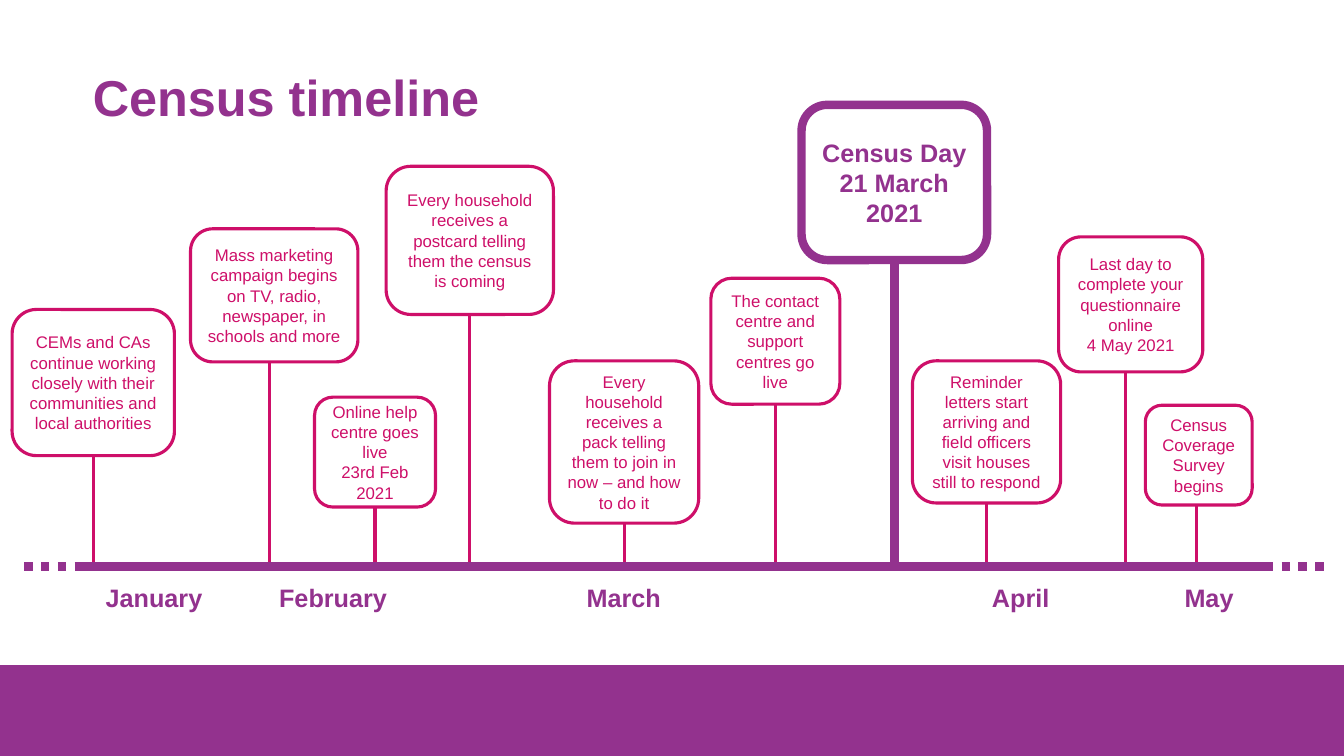
from lxml.etree import SubElement
from pptx import Presentation
from pptx.dml.color import RGBColor
from pptx.enum.dml import MSO_LINE
from pptx.enum.shapes import MSO_CONNECTOR, MSO_SHAPE
from pptx.enum.text import MSO_ANCHOR, PP_ALIGN
from pptx.oxml.ns import qn
from pptx.util import Inches, Pt

COLORS = {"purple": "93328E", "pink": "CE0F69", "white": "FFFFFF"}
AXIS_Y = 5.62
MONTHS = [("January", 0.95, 1.17), ("February", 2.67, 1.28), ("March", 5.72, 0.95),
          ("April", 9.74, 0.78), ("May", 11.65, 0.69)]
# Each event: lines, box, stem x (None joins the middle), fill
EVENTS = [
    (["Reminder letters start arriving and field officers visit houses still to respond"],
     (9.05, 3.58, 1.47, 1.41), None, "white"),
    (["Every household receives a pack telling them to join in now – and how to do it"],
     (5.45, 3.58, 1.48, 1.61), None, None),
    (["The contact centre and support centres go live"],
     (7.05, 2.76, 1.28, 1.25), None, None),
    (["Census Coverage Survey begins"],
     (11.36, 4.02, 1.06, 0.99), 11.87, "white"),
    (["Mass marketing campaign begins on TV, radio, newspaper, in schools and more"],
     (1.89, 2.27, 1.66, 1.32), 2.67, "white"),
    (["Every household receives a postcard telling them the census is coming"],
     (3.83, 1.65, 1.66, 1.47), None, "white"),
    (["Last day to complete your questionnaire online", "4 May 2021"],
     (10.5, 2.35, 1.43, 1.34), 11.16, "white"),
    (["Online help centre goes live", "23rd Feb 2021"],
     (3.12, 3.94, 1.2, 1.09), None, "white"),
    (["CEMs and CAs continue working closely with their communities and local authorities"],
     (0.12, 3.07, 1.61, 1.45), None, "white"),
]


def rgb(name):
    """Return the named colour."""
    return RGBColor.from_string(COLORS[name])


def write(tf, lines, size, color, bold=False, align=PP_ALIGN.LEFT):
    """Write one paragraph per line into a text frame."""
    tf.text = "\n".join(lines)
    for p in tf.paragraphs:
        p.alignment = align
        p.font.name = "Arial"
        p.font.size = Pt(size)
        p.font.bold = bold
        p.font.color.rgb = rgb(color)


def add_label(s, text, x, y, w, h, size):
    """Add a bold purple text box and return its text frame."""
    tf = s.shapes.add_textbox(Inches(x), Inches(y), Inches(w), Inches(h)).text_frame
    tf.word_wrap = False
    write(tf, [text], size, "purple", True)
    return tf


def add_line(s, x1, y1, x2, y2, color, width, dash=None):
    """Add a straight line without shadow."""
    line = s.shapes.add_connector(MSO_CONNECTOR.STRAIGHT, Inches(x1), Inches(y1),
                                  Inches(x2), Inches(y2))
    line.line.color.rgb = rgb(color)
    line.line.width = Pt(width)
    if dash:
        line.line.dash_style = dash
    SubElement(line._element.spPr, qn("a:effectLst"))
    return line


def add_event(s, lines, box, stem_x=None, fill="white", color="pink", width=2.25,
              size=12, bold=False):
    """Add a rounded box with a stem down to the axis."""
    x, y, w, h = box
    foot_x = stem_x or x + w / 2
    stem = add_line(s, foot_x, y + h, foot_x, AXIS_Y, color, width)
    sp = s.shapes.add_shape(MSO_SHAPE.ROUNDED_RECTANGLE, *map(Inches, box))
    sp.shadow.inherit = False
    if fill:
        sp.fill.solid()
        sp.fill.fore_color.rgb = rgb(fill)
    else:
        sp.fill.background()
    sp.line.color.rgb = rgb(color)
    sp.line.width = Pt(width)
    if stem_x is None:
        stem.begin_connect(sp, 2)
    tf = sp.text_frame
    tf.word_wrap = True
    tf.vertical_anchor = MSO_ANCHOR.MIDDLE
    write(tf, lines, size, color, bold, PP_ALIGN.CENTER)


def add_title(s, text):
    """Add the slide title."""
    tf = add_label(s, text, 0.92, 0.72, 8.32, 0.55, 36)
    tf.word_wrap = True
    tf.vertical_anchor = MSO_ANCHOR.MIDDLE
    tf.margin_left = tf.margin_right = tf.margin_top = tf.margin_bottom = 0
    tf.paragraphs[0].line_spacing = 0.9


def add_footer_band(s):
    """Add the purple band along the bottom."""
    sp = s.shapes.add_shape(MSO_SHAPE.RECTANGLE, 0, Inches(6.6), Inches(13.33), Inches(0.9))
    sp.shadow.inherit = False
    sp.fill.solid()
    sp.fill.fore_color.rgb = rgb("purple")
    sp.line.fill.background()


def main():
    """Build the census timeline slide."""
    prs = Presentation()
    prs.slide_width, prs.slide_height = Inches(13.33), Inches(7.5)
    s = prs.slides.add_slide(prs.slide_layouts[6])
    add_footer_band(s)
    add_title(s, "Census timeline")
    add_event(s, ["Census Day", "21 March 2021"], (7.95, 1.04, 1.84, 1.54), fill=None,
              color="purple", width=6, size=18, bold=True)
    for month, x, w in MONTHS:
        add_label(s, month, x, 5.73, w, 0.4, 18)
    for x in (11.71, 0.24):
        add_line(s, x, AXIS_Y, x + 1.48, AXIS_Y, "purple", 6, MSO_LINE.ROUND_DOT)
    for event in EVENTS:
        add_event(s, *event)
    add_line(s, 0.77, AXIS_Y, 12.56, AXIS_Y, "purple", 6)
    prs.save("out.pptx")


if __name__ == "__main__":
    main()
